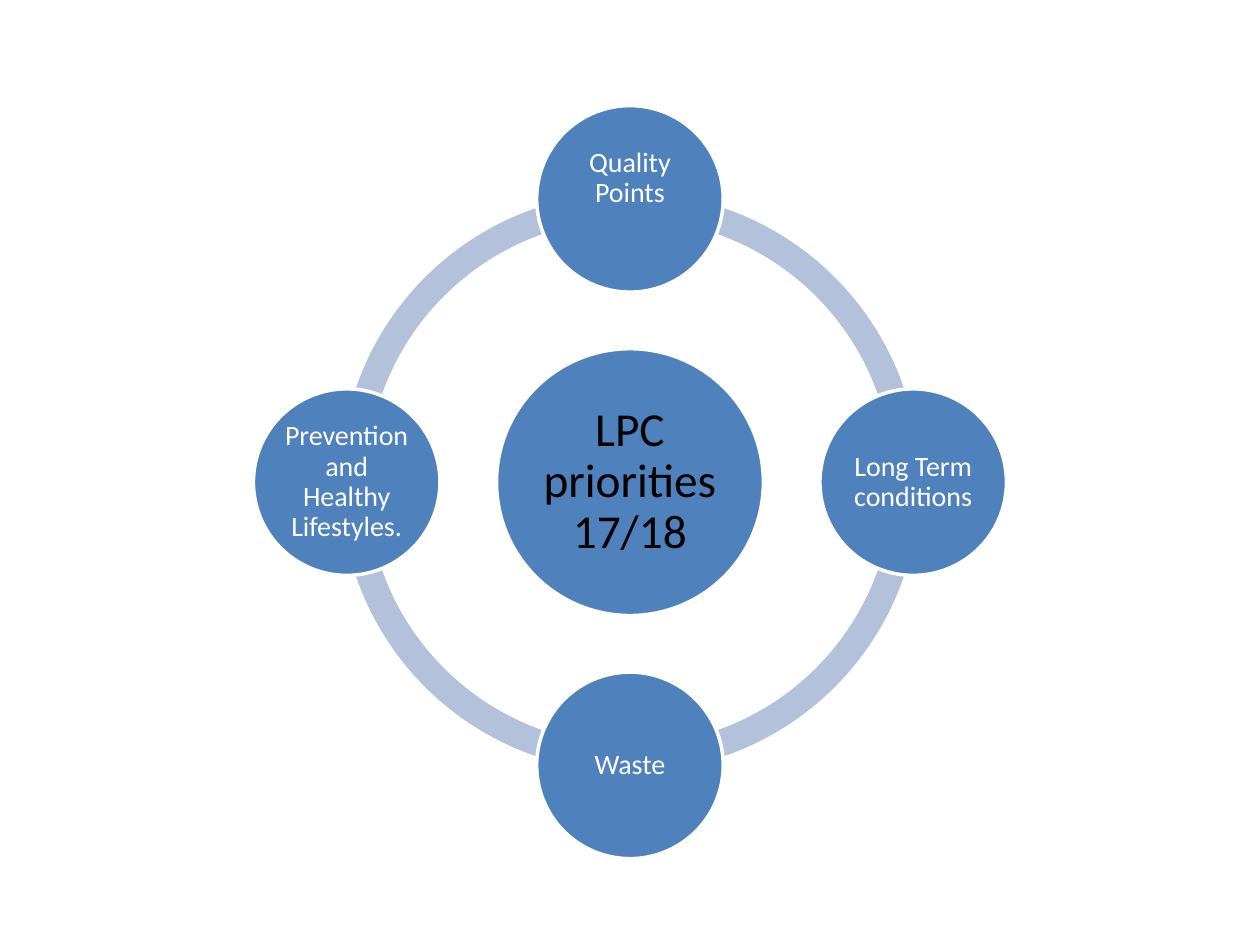
from dataclasses import dataclass
from math import cos, radians, sin

from pptx import Presentation
from pptx.dml.color import RGBColor
from pptx.enum import shapes, text
from pptx.shapes.autoshape import Shape
from pptx.slide import Slide
from pptx.util import Cm, Pt


@dataclass(frozen=True)
class Theme:
    font: str = "Calibri"
    hub_size: float = 27
    node_size: float = 16
    disc: RGBColor = RGBColor(0x4F, 0x81, 0xBD)
    ring: RGBColor = RGBColor(0xB3, 0xC1, 0xDB)
    white: RGBColor = RGBColor(0xFF, 0xFF, 0xFF)
    black: RGBColor = RGBColor(0, 0, 0)


@dataclass(frozen=True)
class Disc:
    label: str
    x: float
    y: float
    diameter: float
    size: float
    color: RGBColor
    inset: float
    lift: float = 0


THEME = Theme()
CENTER_X, CENTER_Y = 12.7, 9.72
ORBIT = 5.71
RING_DIAMETER = 11.68
RING_THICKNESS = 0.046
QUARTER_TURN = 54  # block arc angles: 0.6 units per degree
FULL_TURN = 4 * QUARTER_TURN
PRIORITIES = (
    ("Quality Points", 0.82),
    ("Long Term conditions", 0),
    ("Waste", 0),
    ("Prevention and Healthy Lifestyles.", 0),
)


def add_round_shape(page: Slide, kind: shapes.MSO_SHAPE, x: float, y: float,
                    diameter: float, fill: RGBColor) -> Shape:
    """Add a filled shape centred on x, y (in centimetres)."""
    shape = page.shapes.add_shape(
        kind, Cm(x - diameter / 2), Cm(y - diameter / 2), Cm(diameter), Cm(diameter))
    shape.shadow.inherit = False
    shape.fill.solid()
    shape.fill.fore_color.rgb = fill
    return shape


def add_ring_quarter(page: Slide, start: int) -> None:
    arc = add_round_shape(page, shapes.MSO_SHAPE.BLOCK_ARC, CENTER_X, CENTER_Y,
                          RING_DIAMETER, THEME.ring)
    arc.line.fill.background()
    arc.adjustments[0] = start
    arc.adjustments[1] = (start + QUARTER_TURN) % FULL_TURN
    arc.adjustments[2] = RING_THICKNESS


def add_disc(page: Slide, disc: Disc) -> None:
    """Add a labelled circle; lift is extra bottom margin that raises the label."""
    shape = add_round_shape(page, shapes.MSO_SHAPE.OVAL, disc.x, disc.y,
                            disc.diameter, THEME.disc)
    shape.line.color.rgb = THEME.white
    shape.line.width = Pt(2)
    frame = shape.text_frame
    frame.word_wrap = True
    frame.vertical_anchor = text.MSO_ANCHOR.MIDDLE
    frame.margin_left = frame.margin_right = frame.margin_top = Cm(disc.inset)
    frame.margin_bottom = Cm(disc.inset + disc.lift)
    frame.text = disc.label
    para = frame.paragraphs[0]
    para.alignment = text.PP_ALIGN.CENTER
    para.line_spacing = 0.9
    span = para.runs[0]
    span.font.name = THEME.font
    span.font.size = Pt(disc.size)
    span.font.color.rgb = disc.color


def main() -> None:
    deck = Presentation()
    deck.slide_width, deck.slide_height = Cm(25.4), Cm(19.05)
    page = deck.slides.add_slide(deck.slide_layouts[6])

    for quarter in range(4):
        add_ring_quarter(page, quarter * QUARTER_TURN)

    add_disc(page, Disc("LPC priorities 17/18", CENTER_X, CENTER_Y, 5.38,
                        THEME.hub_size, THEME.black, 0.1))
    for index, (label, lift) in enumerate(PRIORITIES):
        angle = radians(90 * index - 90)
        add_disc(page, Disc(label, CENTER_X + ORBIT * cos(angle),
                            CENTER_Y + ORBIT * sin(angle), 3.76,
                            THEME.node_size, THEME.white, 0.05, lift))

    deck.save("out.pptx")


if __name__ == "__main__":
    main()
